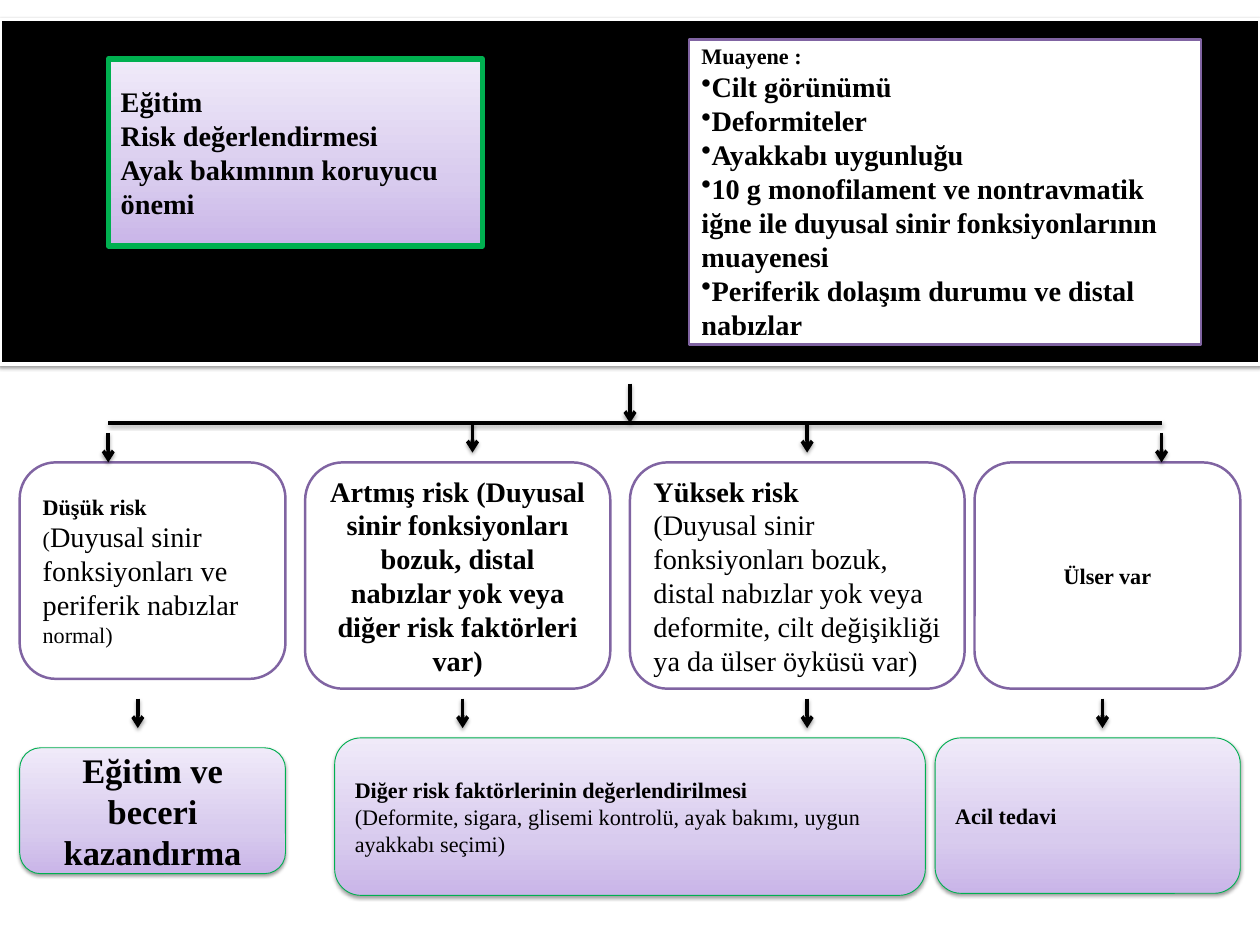
from copy import deepcopy
from lxml.etree import SubElement
from pptx import Presentation
from pptx.dml.color import RGBColor
from pptx.enum.shapes import MSO_CONNECTOR as Link, MSO_SHAPE as Kind
from pptx.enum.text import MSO_ANCHOR as Anchor, PP_ALIGN as Align
from pptx.oxml.ns import qn
from pptx.util import Inches, Pt


def hue(code):
    """Turn a hex string into a colour."""
    return RGBColor.from_string(code)


def shade(item, alpha, drop):
    """Give a shape or connector a soft shadow that falls straight down."""
    effects = SubElement(item._element.spPr, qn("a:effectLst"))
    outer = SubElement(effects, qn("a:outerShdw"), blurRad=str(Pt(3.1)),
                       dist=str(Pt(drop)), dir="5400000", rotWithShape="0")
    tint = SubElement(outer, qn("a:srgbClr"), val="000000")
    SubElement(tint, qn("a:alpha"), val=str(alpha * 1000))


deck = Presentation()
deck.slide_width, deck.slide_height = Inches(14.22), Inches(10.67)
slide = deck.slides.add_slide(deck.slide_layouts[6])
unit = deck.slide_width / 128  # the slide is a grid of 128 columns by 96 rows

# Fill (None is the lilac gradient), border colour, border width, shadow
looks = {
    "band": ("000000", "FFFFFF", 3, True),
    "plain": ("FFFFFF", "8064A2", 2, False),
    "frame": (None, "00B050", 4.5, True),
    "care": (None, "00B050", 0.75, True),
}
lilac = [(0, "C9B5E8"), (0.35, "D8CBEE"), (1, "F0EAF9")]
left, mid = Align.LEFT, Align.CENTER
box, oval = Kind.RECTANGLE, Kind.ROUNDED_RECTANGLE

# Kind, look, (column, row, width, height), alignment,
# paragraphs of runs (text, size, bold)
cards = [
    (box, "band", (0, 2, 128, 35), left, []),
    (box, "frame", (11, 6, 38, 19), left, [
        [("Eğitim", 23, True)],
        [("Risk değerlendirmesi", 23, True)],
        [("Ayak bakımının koruyucu önemi", 23, True)]]),
    (box, "plain", (70, 4, 52, 31), left, [
        [("Muayene :", 18, True)],
        [("•Cilt görünümü", 23, True)],
        [("•Deformiteler", 23, True)],
        [("•Ayakkabı uygunluğu", 23, True)],
        [("•10 g monofilament ve nontravmatik iğne ile duyusal sinir "
          "fonksiyonlarının muayenesi", 23, True)],
        [("•Periferik dolaşım durumu ve distal nabızlar", 23, True)]]),
    (oval, "plain", (2, 47, 27, 22), left, [
        [("Düşük risk", 18, True)],
        [("(", 18, False),
         ("Duyusal sinir fonksiyonları ve periferik nabızlar ", 23, False),
         ("normal)", 18, False)]]),
    (oval, "plain", (31, 47, 31, 23), mid, [
        [("Artmış risk (Duyusal sinir fonksiyonları bozuk, distal nabızlar "
          "yok veya diğer risk faktörleri var)", 23, True)]]),
    (oval, "plain", (64, 47, 34, 23), left, [
        [("Yüksek risk", 23, True)],
        [("(Duyusal sinir fonksiyonları bozuk, distal nabızlar yok veya "
          "deformite, cilt değişikliği ya da ülser öyküsü var)", 23, False)]]),
    (oval, "plain", (99, 47, 27, 23), mid, [[("Ülser var", 18, True)]]),
    (oval, "care", (2, 76, 27, 12.8), mid, [
        [("Eğitim ve beceri kazandırma", 28, True)]]),
    (oval, "care", (34, 75, 60, 16), left, [
        [("Diğer risk faktörlerinin değerlendirilmesi", 18, True)],
        [("(Deformite, sigara, glisemi kontrolü, ayak bakımı, uygun ayakkabı "
          "seçimi)", 18, False)]]),
    (oval, "care", (95, 75, 31, 15.8), left, [[("Acil tedavi", 18, True)]]),
]
frame = {
    "word_wrap": True, "vertical_anchor": Anchor.MIDDLE,
    "margin_left": Inches(0.14), "margin_right": Inches(0.14),
    "margin_top": Inches(0.07), "margin_bottom": Inches(0.07),
}

for kind, look, place, align, paras in cards:
    fill, edge, width, shadow = looks[look]
    card = slide.shapes.add_shape(kind, *[round(n * unit) for n in place])
    if fill:
        card.fill.solid()
        card.fill.fore_color.rgb = hue(fill)
    else:
        card.fill.gradient()
        card.fill.gradient_angle = 90
        stops = card._element.spPr.find(".//" + qn("a:gsLst"))
        stops.insert(1, deepcopy(stops[0]))
        for stop, (spot, code) in zip(card.fill.gradient_stops, lilac):
            stop.position = spot
            stop.color.rgb = hue(code)
    card.line.color.rgb = hue(edge)
    card.line.width = Pt(width)
    if shadow:
        shade(card, 38, 1.6)
    else:
        card.shadow.inherit = False

    text = card.text_frame
    for name, value in frame.items():
        setattr(text, name, value)
    for i, runs in enumerate(paras):
        para = text.add_paragraph() if i else text.paragraphs[0]
        para.alignment = align
        if runs[0][0].startswith("•"):
            SubElement(para._p.get_or_add_pPr(), qn("a:buChar"), char="•")
        for words, size, bold in runs:
            run = para.add_run()
            run.text = words.removeprefix("•")
            style = {"name": "Times New Roman", "size": Pt(size), "bold": bold}
            for name, value in style.items():
                setattr(run.font, name, value)
            run.font.color.rgb = hue("000000")

# Start column, start row, end column, end row
bar = (11, 43, 118, 43)
arrows = [(64, 39, 64, 43)]
for row, end, cols in [(44, 47, (11, 118)), (43, 46, (48, 82)),
                       (71, 74, (14, 47, 82, 112))]:
    arrows += [(col, row, col, end) for col in cols]

for ends in [bar, *arrows]:
    link = slide.shapes.add_connector(
        Link.STRAIGHT, *[round(n * unit) for n in ends])
    link.line.color.rgb = hue("000000")
    link.line.width = Pt(3)
    if ends != bar:
        SubElement(link.line._get_or_add_ln(), qn("a:tailEnd"), type="arrow")
    shade(link, 35, 1.8)

deck.save("out.pptx")
